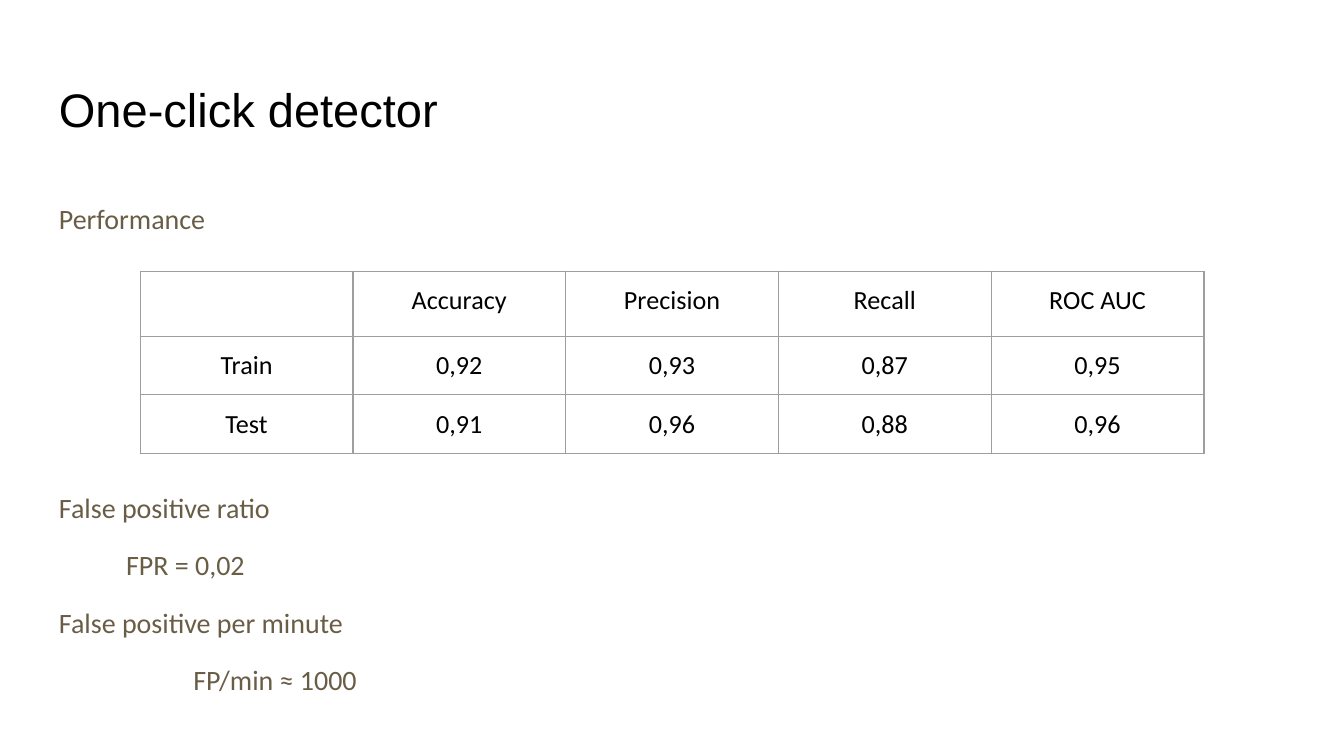
from lxml import etree
from pptx import Presentation
from pptx.dml.color import RGBColor
from pptx.enum.text import MSO_ANCHOR, PP_ALIGN
from pptx.oxml.ns import qn
from pptx.util import Pt

CENTER = PP_ALIGN.CENTER
TOP, BOTTOM = MSO_ANCHOR.TOP, MSO_ANCHOR.BOTTOM

# Content
TITLE = "One-click detector"
SCORES = [
    ("", "Accuracy", "Precision", "Recall", "ROC AUC"),
    ("Train", "0,92", "0,93", "0,87", "0,95"),
    ("Test", "0,91", "0,96", "0,88", "0,96"),
]
TABLE_GAP = 135.6  # room for the table between the first two lines
NOTES = [  # text, indent, space before
    ("Performance", 0, 0),
    ("False positive ratio", 0, TABLE_GAP),
    ("FPR = 0,02", 36, 12),
    ("False positive per minute", 0, 12),
    ("FP/min ≈ 1000", 72, 12),
]

THEME = {
    "title": ("Arial", 25.2, RGBColor(0x00, 0x00, 0x00)),
    "notes": ("Calibri", 15, RGBColor(0x69, 0x5D, 0x46)),
    "table": ("Calibri", 14, RGBColor(0x00, 0x00, 0x00)),
    "border": "9E9E9E",
}

# Layout
LEFT, WIDTH, INSET = 24.5, 671, 7.2
TABLE_LEFT, TABLE_TOP = 75.1, 145.4
COLUMN_WIDTH = 114
ROW_HEIGHTS = [34.8, 31.3, 31.3]


def style(paragraph, role):
    font = paragraph.font
    font.name, size, font.color.rgb = THEME[role]
    font.size = Pt(size)


def set_insets(target):
    target.margin_left = target.margin_right = Pt(INSET)
    target.margin_top = target.margin_bottom = Pt(INSET)


def add_text_frame(slide, top, height, anchor):
    box = slide.shapes.add_textbox(Pt(LEFT), Pt(top), Pt(WIDTH), Pt(height))
    frame = box.text_frame
    frame.word_wrap = True
    frame.vertical_anchor = anchor
    set_insets(frame)
    return frame


def add_borders(cell):
    properties = cell._tc.get_or_add_tcPr()
    for position, side in enumerate(("lnL", "lnR", "lnT", "lnB")):
        line = etree.Element(qn(f"a:{side}"), w=str(Pt(0.75)))
        fill = etree.SubElement(line, qn("a:solidFill"))
        etree.SubElement(fill, qn("a:srgbClr"), val=THEME["border"])
        properties.insert(position, line)


def main():
    deck = Presentation()
    deck.slide_width, deck.slide_height = Pt(720), Pt(405)
    slide = deck.slides.add_slide(deck.slide_layouts[6])

    # Title
    heading = add_text_frame(slide, 35.3, 45.4, BOTTOM).paragraphs[0]
    heading.text = TITLE
    style(heading, "title")

    # Notes above and below the table
    notes = add_text_frame(slide, 100, 290, TOP)
    for i, (text, indent, space_before) in enumerate(NOTES):
        note = notes.add_paragraph() if i else notes.paragraphs[0]
        note.text = text
        note.line_spacing = 1.05
        note.space_before = Pt(space_before)
        note._p.get_or_add_pPr().set("marL", str(Pt(indent)))
        style(note, "notes")

    # Score table
    rows, columns = len(SCORES), len(SCORES[0])
    table = slide.shapes.add_table(
        rows, columns, Pt(TABLE_LEFT), Pt(TABLE_TOP),
        Pt(COLUMN_WIDTH * columns), Pt(sum(ROW_HEIGHTS))).table
    table.first_row = table.horz_banding = False
    for column in table.columns:
        column.width = Pt(COLUMN_WIDTH)
    for r, (scores, height) in enumerate(zip(SCORES, ROW_HEIGHTS)):
        table.rows[r].height = Pt(height)
        for c, score in enumerate(scores):
            cell = table.cell(r, c)
            cell.text = score
            cell.fill.background()
            set_insets(cell)
            add_borders(cell)
            label = cell.text_frame.paragraphs[0]
            label.alignment = CENTER
            style(label, "table")

    deck.save("out.pptx")


if __name__ == "__main__":
    main()
